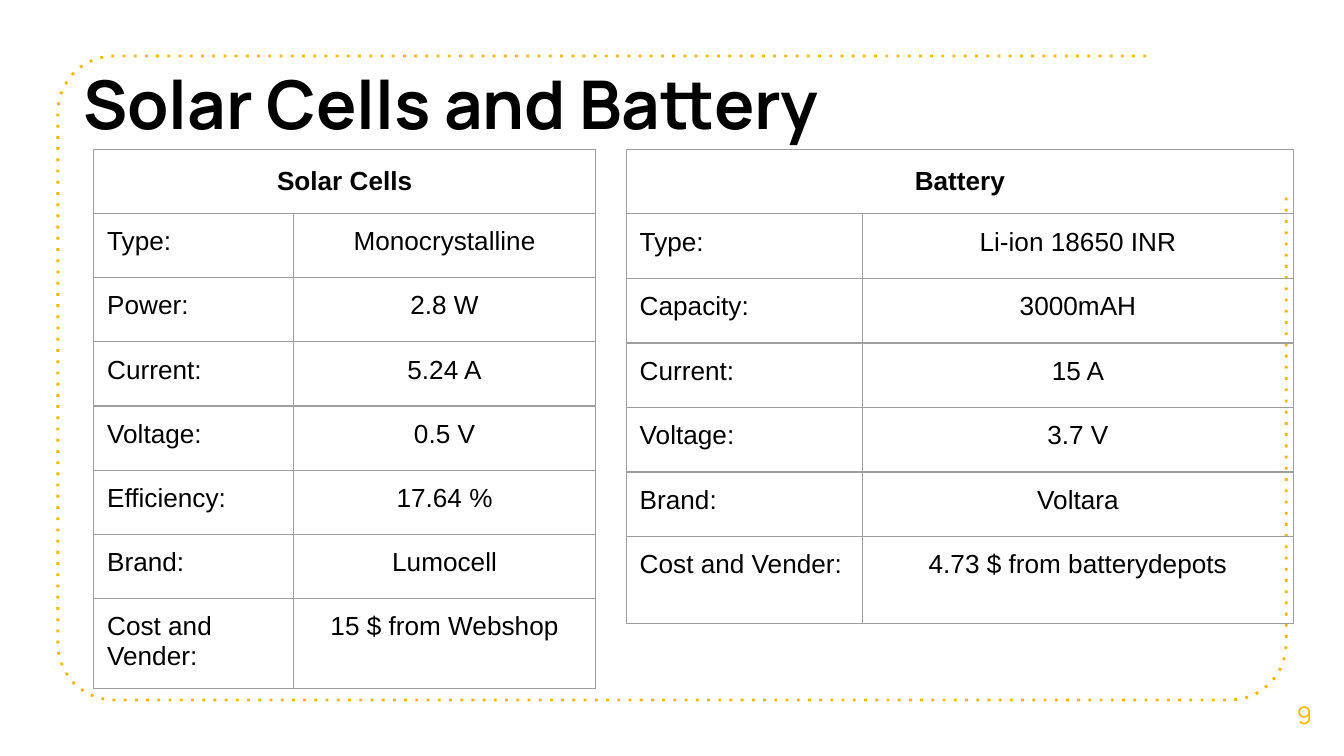
from math import cos, radians, sin

from lxml.etree import SubElement
from pptx import Presentation
from pptx.dml.color import RGBColor
from pptx.enum.text import MSO_ANCHOR as Anchor, PP_ALIGN as Align
from pptx.oxml.ns import qn
from pptx.util import Pt

AMBER = RGBColor(0xFF, 0xB6, 0x00)
BLACK = RGBColor(0x00, 0x00, 0x00)
GRAY = RGBColor(0x9E, 0x9E, 0x9E)

SOLAR_CELLS = [
    ("Type:", "Monocrystalline"),
    ("Power:", "2.8 W"),
    ("Current:", "5.24 A"),
    ("Voltage:", "0.5 V"),
    ("Efficiency:", "17.64 %"),
    ("Brand:", "Lumocell"),
    ("Cost and Vender:", "15 $ from Webshop"),
]
BATTERY = [
    ("Type:", "Li-ion 18650 INR"),
    ("Capacity:", "3000mAH"),
    ("Current:", "15 A"),
    ("Voltage:", "3.7 V"),
    ("Brand:", "Voltara"),
    ("Cost and Vender:", "4.73 $ from batterydepots"),
]


class SlideBuilder:
    heading_font = "Manrope"
    table_font = "Arial"
    inset = Pt(7.2)

    def __init__(self, page):
        self.page = page

    def style_text(self, frame, size, font, color, bold=False, align=Align.LEFT):
        for para in frame.paragraphs:
            para.alignment = align
            for span in para.runs:
                span.font.size = Pt(size)
                span.font.name = font
                span.font.bold = bold
                span.font.color.rgb = color

    def set_insets(self, target):
        target.margin_left = target.margin_right = self.inset
        target.margin_top = target.margin_bottom = self.inset

    def text(self, words, left, top, width, height, size, color,
             bold=False, align=Align.LEFT, anchor=Anchor.TOP):
        box = self.page.shapes.add_textbox(Pt(left), Pt(top), Pt(width), Pt(height))
        frame = box.text_frame
        frame.word_wrap = True
        frame.vertical_anchor = anchor
        self.set_insets(frame)
        frame.text = words
        self.style_text(frame, size, self.heading_font, color, bold, align)

    def dotted_frame(self, left, top, right, bottom, radius, top_end, right_end):
        """Rounded frame, left open at its upper right corner."""
        corners = [(left + radius, top + radius, 270),
                   (left + radius, bottom - radius, 180),
                   (right - radius, bottom - radius, 90)]
        points = [(x + radius * cos(radians(start - step)),
                   y + radius * sin(radians(start - step)))
                  for x, y, start in corners for step in range(0, 91, 9)]
        points.append((right, right_end))
        builder = self.page.shapes.build_freeform(Pt(top_end), Pt(top))
        builder.add_line_segments([(Pt(x), Pt(y)) for x, y in points], close=False)
        shape = builder.convert_to_shape()
        shape.shadow.inherit = False
        shape.fill.background()
        shape.line.color.rgb = AMBER
        shape.line.width = Pt(1.5)
        outline = shape.element.spPr.find(qn("a:ln"))
        SubElement(outline, qn("a:prstDash"), val="dot")

    def cell_borders(self, cell):
        properties = cell._tc.get_or_add_tcPr()
        for side in ("a:lnL", "a:lnR", "a:lnT", "a:lnB"):
            line = SubElement(properties, qn(side), w=str(Pt(0.75)))
            fill = SubElement(line, qn("a:solidFill"))
            SubElement(fill, qn("a:srgbClr"), val=str(GRAY))

    def table(self, heading, entries, left, top, widths, row_height, last_height):
        heights = [row_height] * len(entries) + [last_height]
        table = self.page.shapes.add_table(
            len(heights), len(widths), Pt(left), Pt(top),
            Pt(sum(widths)), Pt(sum(heights))).table
        table.first_row = table.horz_banding = False
        for column, width in zip(table.columns, widths):
            column.width = Pt(width)
        for row, height in zip(table.rows, heights):
            row.height = Pt(height)
        table.cell(0, 0).merge(table.cell(0, 1))

        for r, entry in enumerate([(heading, ""), *entries]):
            for c, words in enumerate(entry):
                cell = table.cell(r, c)
                self.set_insets(cell)
                self.cell_borders(cell)
                cell.fill.background()
                cell.vertical_anchor = Anchor.MIDDLE if r == 0 else Anchor.TOP
                if words:
                    cell.text_frame.text = words
                    align = Align.CENTER if r == 0 or c == 1 else Align.LEFT
                    self.style_text(cell.text_frame, 14, self.table_font, BLACK,
                                    bold=r == 0, align=align)


def main():
    deck = Presentation()
    deck.slide_width, deck.slide_height = Pt(720), Pt(405)
    slide = SlideBuilder(deck.slides.add_slide(deck.slide_layouts[6]))

    # Decorative frame and page number
    slide.dotted_frame(31, 30, 689, 375, radius=30, top_end=614, right_end=105)
    slide.text("9", 677.5, 361.5, 42.5, 43, 13, AMBER,
               align=Align.CENTER, anchor=Anchor.MIDDLE)

    # Title
    slide.text("Solar Cells and Battery", 37.5, 26, 435, 54, 36, BLACK, bold=True)

    # Specification tables
    slide.table("Battery", BATTERY, 335.5, 80, (126.5, 231), 34.6, 46.4)
    slide.table("Solar Cells", SOLAR_CELLS, 50.2, 80, (107, 162), 34.4, 46)

    deck.save("out.pptx")


if __name__ == "__main__":
    main()
